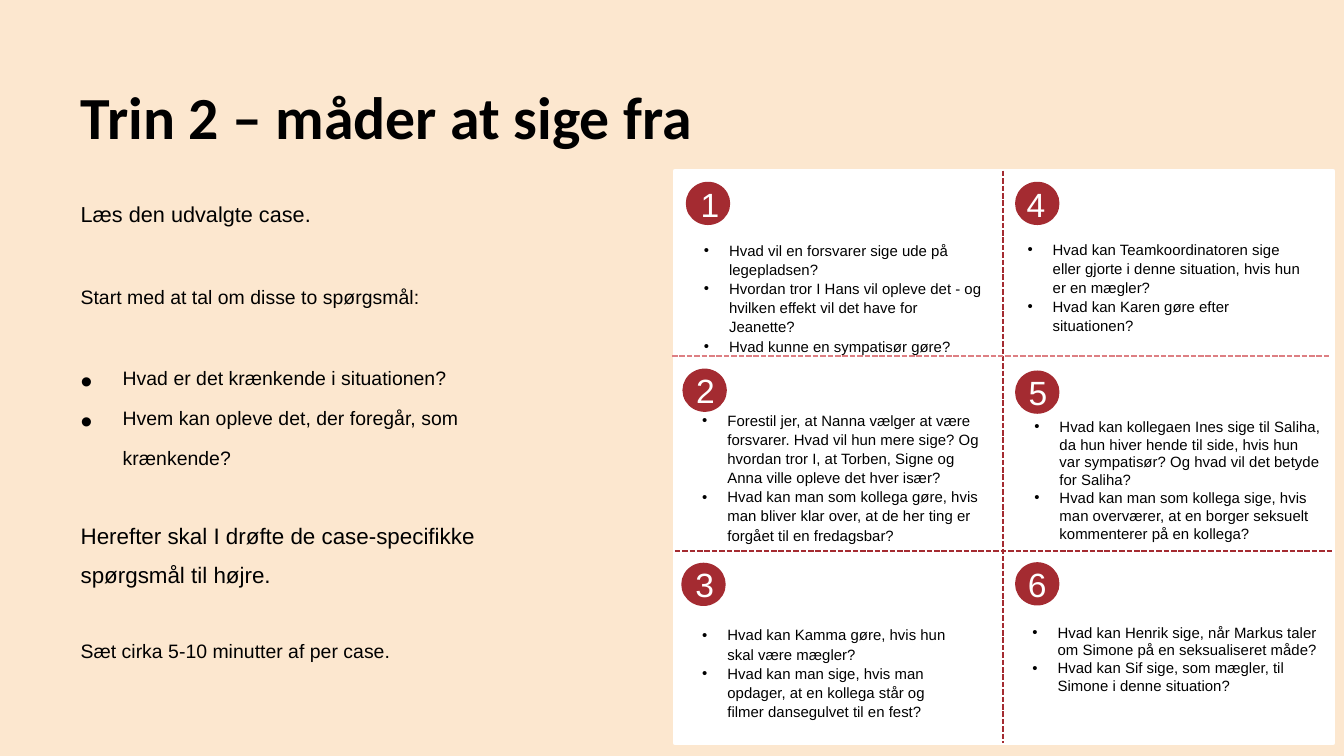
from pptx import Presentation
from pptx.dml.color import RGBColor
from pptx.enum.dml import MSO_LINE
from pptx.enum.shapes import MSO_CONNECTOR, MSO_SHAPE
from pptx.enum.text import MSO_ANCHOR, MSO_AUTO_SIZE as Fit, PP_ALIGN
from pptx.oxml.ns import qn
from pptx.util import Pt
from lxml.etree import SubElement

RED, ROSE, WHITE, BLACK, CREAM = "A42B31", "DD7F83", "FFFFFF", "000000", "FCE7CF"

BODY = [
    ("Læs den udvalgte case.", 20, 0, False),
    ("Start med at tal om disse to spørgsmål:", 18, 21.3, False),
    ("Hvad er det krænkende i situationen?", 18, 21.7, True),
    ("Hvem kan opleve det, der foregår, som krænkende?", 18, 0, True),
    ("Herefter skal I drøfte de case-specifikke spørgsmål til højre.", 12, 14.1, False),
    ("Sæt cirka 5-10 minutter af per case.", 18, 25.2, False),
]

CASES = [
    ("1", (367.4, 97.4), (368.3, 94.8, 21), (370, 125.3, 165.6, 69), 1.07, [
        "Hvad vil en forsvarer sige ude på legepladsen?",
        "Hvordan tror I Hans vil opleve det - og hvilken effekt vil det have for Jeanette?",
        "Hvad kunne en sympatisør gøre?"]),
    ("2", (365.6, 197.5), (365.8, 194.4, 23), (369.1, 216.3, 169.2, 89), 1.07, [
        "Forestil jer, at Nanna vælger at være forsvarer. Hvad vil hun mere sige? "
        "Og hvordan tror I, at Torben, Signe og Anna ville opleve det hver især?",
        "Hvad kan man som kollega gøre, hvis man bliver klar over, "
        "at de her ting er forgået til en fredagsbar?"]),
    ("3", (365, 301.5), (365.5, 298.8, 23), (369.1, 331.2, 151, 69), 1.07, [
        "Hvad kan Kamma gøre, hvis hun skal være mægler?",
        "Hvad kan man sige, hvis man opdager, at en kollega står og "
        "filmer dansegulvet til en fest?"]),
    ("4", (543.8, 97.4), (542.9, 95, 24.5), (543.4, 124.5, 161.3, 59), 1.07, [
        "Hvad kan Teamkoordinatoren sige eller gjorte i denne situation, "
        "hvis hun er en mægler?",
        "Hvad kan Karen gøre efter situationen?"]),
    ("5", (543.8, 198.5), (544, 195.6, 23.8), (547, 220, 169.2, 90), 1, [
        "Hvad kan kollegaen Ines sige til Saliha, da hun hiver hende til side, "
        "hvis hun var sympatisør? Og hvad vil det betyde for Saliha?",
        "Hvad kan man som kollega sige, hvis man overværer, "
        "at en borger seksuelt\vkommenterer på en kollega?"]),
    ("6", (543.8, 301.2), (543.6, 298.8, 23.8), (546, 330.3, 169.2, 46), 1, [
        "Hvad kan Henrik sige, når Markus taler om Simone på en seksualiseret måde?",
        "Hvad kan Sif sige, som mægler, til Simone i denne situation?"]),
]


def color(value):
    return RGBColor.from_string(value)


class SlideBuilder:
    """Holds the text style and the current slide, and adds each kind of element."""

    font = "Arial"

    def __init__(self, deck):
        self.slide = deck.slides.add_slide(deck.slide_layouts[1])
        fill = self.slide.background.fill
        fill.solid()
        fill.fore_color.rgb = color(CREAM)

    def place(self, box, left, top, width, height):
        box.left, box.top, box.width, box.height = map(Pt, (left, top, width, height))

    def format(self, para, size, ink=BLACK, font=None, bold=False, raised=False):
        for span in para.runs:
            span.font.name, span.font.size = font or self.font, Pt(size)
            span.font.bold = bold
            span.font.color.rgb = color(ink)
            if raised:
                span.font._element.set("baseline", "30000")

    def bullet(self, para, indent):
        props = para._p.get_or_add_pPr()
        props.set("marL", str(Pt(indent)))
        props.set("indent", str(-Pt(indent)))
        if indent:
            SubElement(props, qn("a:buFont")).set("typeface", self.font)
            SubElement(props, qn("a:buChar")).set("char", "•")
        else:
            SubElement(props, qn("a:buNone"))

    def title(self, text, *area):
        box = self.slide.shapes.title
        self.place(box, *area)
        frame = box.text_frame
        frame.text = text
        frame.auto_size, frame.vertical_anchor = Fit.NONE, MSO_ANCHOR.BOTTOM
        para = frame.paragraphs[0]
        para.alignment = PP_ALIGN.LEFT
        self.format(para, 32, font="Calibri", bold=True)

    def body(self, items, *area):
        box = self.slide.placeholders[1]
        self.place(box, *area)
        frame = box.text_frame
        frame.text = "\n".join(item[0] for item in items)
        frame.auto_size, frame.margin_top = Fit.NONE, Pt(20.2)
        for para, (_, size, gap, bulleted) in zip(frame.paragraphs, items):
            raised = size > 12
            para.line_spacing = 1.0 if raised else 1.47
            para.space_before = Pt(gap)
            self.bullet(para, 22.5 if bulleted else 0)
            self.format(para, size, raised=raised)

    def shape(self, kind, fill, area, outline=None):
        shape = self.slide.shapes.add_shape(kind, *map(Pt, area))
        shape.shadow.inherit = False
        shape.fill.solid()
        shape.fill.fore_color.rgb = color(fill)
        if outline:
            shape.line.color.rgb = color(fill)
            shape.line.width = Pt(outline)
        else:
            shape.line.fill.background()

    def divider(self, ink, *ends):
        line = self.slide.shapes.add_connector(MSO_CONNECTOR.STRAIGHT, *map(Pt, ends))
        line.line.color.rgb = color(ink)
        line.line.width = Pt(1)
        line.line.dash_style = MSO_LINE.SQUARE_DOT
        SubElement(line._element.spPr, qn("a:effectLst"))

    def text_box(self, lines, area, wrap):
        box = self.slide.shapes.add_textbox(*map(Pt, area))
        frame = box.text_frame
        frame.word_wrap, frame.auto_size = wrap, Fit.SHAPE_TO_FIT_TEXT
        for index, text in enumerate(lines):
            para = frame.add_paragraph() if index else frame.paragraphs[0]
            para.text = text
        return frame.paragraphs

    def number(self, text, left, top, width):
        for para in self.text_box([text], (left, top, width, 29), False):
            self.format(para, 18, WHITE)

    def questions(self, lines, area, spacing):
        for para in self.text_box(lines, area, True):
            para.line_spacing = float(spacing)
            self.bullet(para, 13.5)
            self.format(para, 8)


def main():
    deck = Presentation()
    deck.slide_width, deck.slide_height = Pt(720), Pt(405)
    page = SlideBuilder(deck)
    page.title("Trin 2 – måder at sige fra", 36, 16.4, 441.4, 68.5)
    page.body(BODY, 36, 85, 237, 277)
    page.shape(MSO_SHAPE.RECTANGLE, WHITE, (361.5, 91.5, 352.8, 306.7), 2)
    page.divider(RED, 537.3, 91.5, 537.3, 398.2)
    page.divider(ROSE, 360, 190.7, 712.8, 190.7)
    page.divider(RED, 361.5, 295.2, 714.3, 295.2)
    for digit, corner, label, area, spacing, lines in CASES:
        page.shape(MSO_SHAPE.OVAL, RED, (*corner, 23.8, 23.2))
        page.number(digit, *label)
        page.questions(lines, area, spacing)
    deck.save("out.pptx")


if __name__ == "__main__":
    main()
